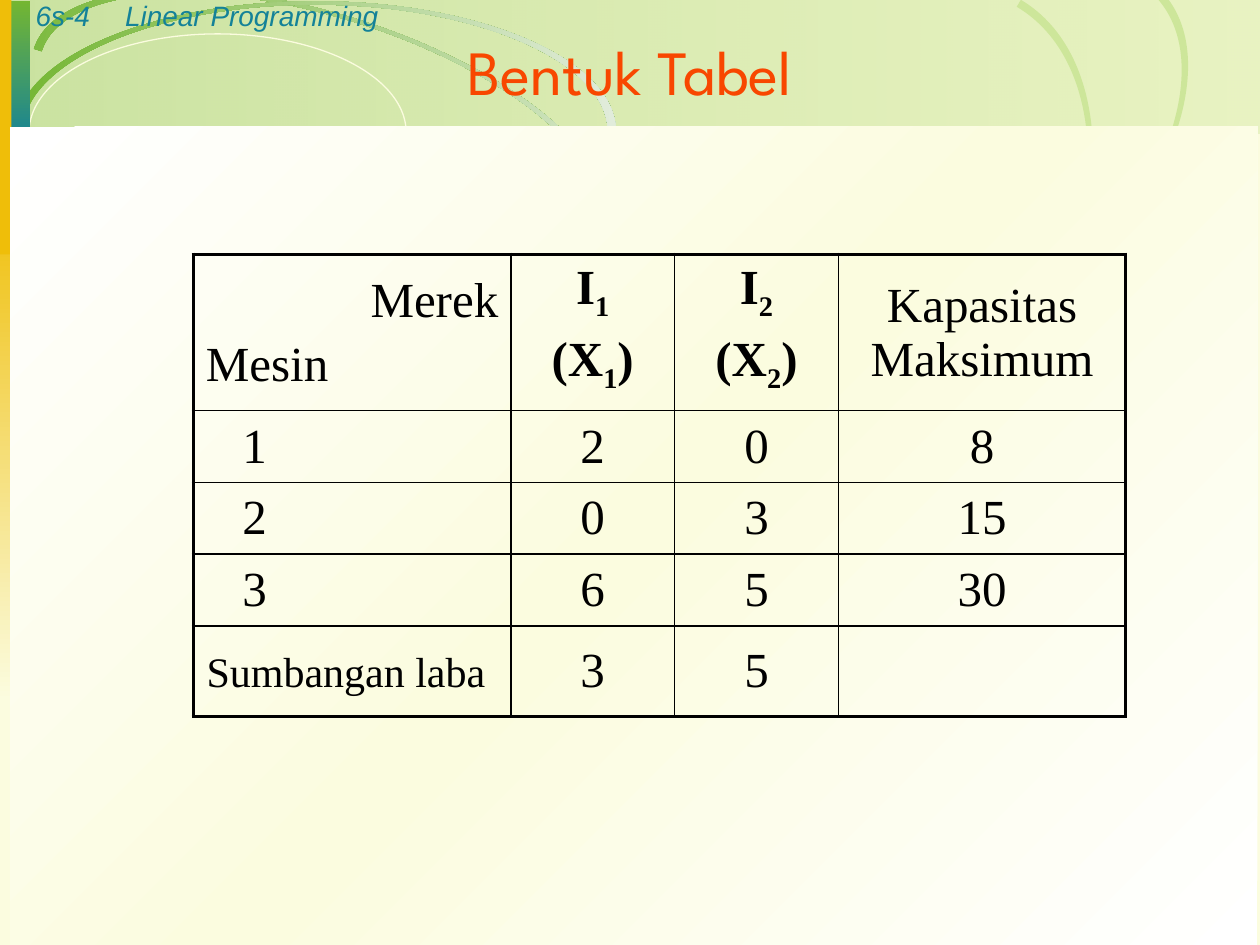
from lxml.etree import SubElement
from pptx import Presentation
from pptx.dml.color import RGBColor
from pptx.enum.shapes import MSO_SHAPE
from pptx.enum.text import MSO_ANCHOR, PP_ALIGN
from pptx.oxml import parse_xml
from pptx.oxml.ns import nsdecls, qn
from pptx.util import Pt

COLORS = {
    "cream": "FBFCDF",
    "white": "FFFFFF",
    "black": "000000",
    "green": "74B632",
    "light_green": "BCDD7B",
    "pale_green": "E1ECDB",
    "lime": "CDE69A",
    "olive": "CEDE73",
    "teal": "148298",
    "yellow": "EFBE09",
    "orange": "F84700",
}
COLUMN_WIDTHS = [181.4, 93.6, 93.6, 164.2]
ROW_HEIGHTS = [81.4, 41, 41, 41, 51.8]
HEADER = ["Merek\nMesin", "I_1\n(X_1_)", "I_2\n(X_2_)", "Kapasitas Maksimum"]
BODY = [
    ["1", "2", "0", "8"],
    ["2", "0", "3", "15"],
    ["3", "6", "5", "30"],
    ["Sumbangan laba", "3", "5", ""],
]


def color(name):
    return RGBColor.from_string(COLORS[name])


class SlideBuilder:
    body_font = "Times New Roman"
    header_font = "Arial"
    title_font = "League Spartan"
    body_size = 28

    def __init__(self, slide):
        self.slide = slide
        slide.background.fill.solid()
        slide.background.fill.fore_color.rgb = color("cream")

    def gradient(self, shape, names, angle, opacities):
        shape.fill.background()
        properties = shape._element.spPr
        gradient = parse_xml(f'<a:gradFill {nsdecls("a")} rotWithShape="1"/>')
        stops = SubElement(gradient, qn("a:gsLst"))
        for index, name in enumerate(names):
            position = 100000 * index // (len(names) - 1)
            stop = SubElement(stops, qn("a:gs"), pos=str(position))
            shade = SubElement(stop, qn("a:srgbClr"), val=COLORS[name])
            if opacities:
                SubElement(shade, qn("a:alpha"), val=str(opacities[index] * 1000))
        SubElement(gradient, qn("a:lin"), ang=str(angle * 60000), scaled="0")
        properties.replace(properties.find(qn("a:noFill")), gradient)

    def paint(self, shape, names, angle=0, opacities=None):
        shape.shadow.inherit = False
        shape.line.fill.background()
        if len(names) > 1:
            self.gradient(shape, names, angle, opacities)
        else:
            shape.fill.solid()
            shape.fill.fore_color.rgb = color(names[0])

    def panel(self, left, top, width, height, names, angle=0, opacities=None):
        shape = self.slide.shapes.add_shape(
            MSO_SHAPE.RECTANGLE, Pt(left), Pt(top), Pt(width), Pt(height))
        self.paint(shape, names, angle, opacities)

    def ellipse(self, left, top, width, height, line):
        shape = self.slide.shapes.add_shape(
            MSO_SHAPE.OVAL, Pt(left), Pt(top), Pt(width), Pt(height))
        shape.shadow.inherit = False
        shape.fill.background()
        shape.line.color.rgb = color(line)
        shape.line.width = Pt(0.75)

    def arc(self, left, top, width, height, tilt, names, flip=False):
        middle_x, middle_y, bend = width / 2, height / 2, 0.55

        def half(inset_x, inset_y):
            rx, ry = middle_x - inset_x, middle_y - inset_y
            offsets = [(-1, 0), (-1, -bend), (-bend, -1), (0, -1),
                       (bend, -1), (1, -bend), (1, 0)]
            return [(Pt(left + middle_x + rx * x), Pt(top + middle_y + ry * y))
                    for x, y in offsets]

        points = half(4.6, 2) + half(0, 0)[::-1]
        builder = self.slide.shapes.build_freeform(*points[0])
        builder.add_line_segments(points[1:], close=True)
        shape = builder.convert_to_shape()
        outline = next(shape._element.iter(qn("a:path")))
        lines = outline.findall(qn("a:lnTo"))
        for start in (0, 3, 7, 10):
            curve = parse_xml(f'<a:cubicBezTo {nsdecls("a")}/>')
            lines[start].addprevious(curve)
            for line in lines[start:start + 3]:
                curve.append(line[0])
                outline.remove(line)
        shape.height = Pt(height)
        outline.set("h", str(Pt(height)))
        shape.rotation = tilt
        if flip:
            shape._element.spPr.find(qn("a:xfrm")).set("flipV", "1")
        self.paint(shape, names)

    def style(self, span, font, size, name, italic=False, bold=False):
        span.font.name = font
        span.font.size = Pt(size)
        span.font.color.rgb = color(name)
        span.font.italic = italic
        span.font.bold = bold

    def text(self, left, top, width, height, words, font, size, name,
             align=PP_ALIGN.LEFT, anchor=MSO_ANCHOR.TOP, inset=7.2, italic=False):
        box = self.slide.shapes.add_textbox(Pt(left), Pt(top), Pt(width), Pt(height))
        frame = box.text_frame
        frame.word_wrap = True
        frame.vertical_anchor = anchor
        frame.margin_left = Pt(inset)
        frame.text = words
        para = frame.paragraphs[0]
        para.alignment = align
        self.style(para.runs[0], font, size, name, italic)

    def borders(self, cell, widths):
        properties = cell._tc.get_or_add_tcPr()
        for index, (side, width) in enumerate(zip("LRTB", widths)):
            properties.insert(index, parse_xml(
                f'<a:ln{side} {nsdecls("a")} w="{Pt(width)}"><a:solidFill>'
                f'<a:srgbClr val="{COLORS["black"]}"/></a:solidFill></a:ln{side}>'))

    def cell_text(self, cell, words, align, size, bold):
        cell.text_frame.text = words.replace("_", "")
        for para, line in zip(cell.text_frame.paragraphs, words.split("\n")):
            para.alignment = align
            para._p.get_or_add_pPr().insert(0, parse_xml(
                f'<a:spcBef {nsdecls("a")}><a:spcPct val="20000"/></a:spcBef>'))
            for position, piece in enumerate(filter(None, line.split("_"))):
                span = para.runs[0] if position == 0 else para.add_run()
                span.text = piece
                self.style(span, self.body_font, size, "black", bold=bold)
                if position % 2:
                    span.font._element.set("baseline", "-25000")

    def table(self, left, top, widths, heights, rows):
        table = self.slide.shapes.add_table(
            len(heights), len(widths), Pt(left), Pt(top),
            Pt(sum(widths)), Pt(sum(heights))).table
        table.first_row = table.horz_banding = False
        for column, width in zip(table.columns, widths):
            column.width = Pt(width)
        last_row, last_column = len(heights) - 1, len(widths) - 1
        for r, (height, row) in enumerate(zip(heights, rows)):
            table.rows[r].height = Pt(height)
            for c, words in enumerate(row):
                cell = table.cell(r, c)
                product = r == 0 and c in (1, 2)
                align = PP_ALIGN.CENTER if c or r == last_row else PP_ALIGN.LEFT
                size = 24 if r == last_row and c == 0 else self.body_size
                self.cell_text(cell, words, align, size, product)
                cell.vertical_anchor = MSO_ANCHOR.TOP if product else MSO_ANCHOR.MIDDLE
                if c == 0 and 0 < r < last_row:
                    cell.text_frame.paragraphs[0]._p.pPr.set("marL", str(Pt(20.8)))
                cell.fill.background()
                edges = (c == 0, c == last_column, r == 0, r == last_row)
                self.borders(cell, [2.25 if edge else 1 for edge in edges])
        table.cell(0, 0).text_frame.paragraphs[0].alignment = PP_ALIGN.RIGHT
        span = table.cell(last_row, 0).text_frame.paragraphs[0].add_run()
        span.text = " "
        self.style(span, self.body_font, self.body_size, "black")


def main():
    deck = Presentation()
    deck.slide_width, deck.slide_height = Pt(720), Pt(540)
    page = SlideBuilder(deck.slides.add_slide(deck.slide_layouts[6]))

    fade = ["green", "pale_green"]
    page.panel(0.7, 0, 719.3, 76.3, ["green", "light_green"], opacities=[36, 29])
    page.arc(11.5, 7.9, 343.4, 143.3, 17.5, fade)
    page.ellipse(16.6, 19.4, 215.5, 112.3, "cream")
    page.panel(0, 111.6, 15.8, 288.7, ["yellow", "cream"], 90)
    page.arc(365, 17.3, 343.4, 186.5, 318.2, ["lime"], flip=True)
    page.arc(324, 37.4, 343.4, 220.3, 300.7, ["lime"], flip=True)
    page.arc(8.6, 0.7, 343.4, 149, 0, fade)
    page.panel(0.7, 0.7, 16.6, 82.1, ["green", "teal"], 90)
    page.panel(0, 0, 6.5, 145.4, ["yellow"])
    band = ["teal", "olive", "yellow", "orange", "cream"]
    for index, pair in enumerate(zip(band, band[1:])):
        page.panel(5.8 + 131.3 * index, 76.3, 262.8 if index == 3 else 132.5, 5.8, pair)
    page.panel(5.8, 72.3, 712.8, 467.7, ["white", "cream", "white"], 45)

    page.text(4.3, -4.3, 77.8, 26.6, "6s-4", page.header_font, 16, "teal",
              inset=16, italic=True)
    page.text(64.5, -4.3, 624.2, 26.6, "Linear Programming", page.header_font, 16,
              "teal", italic=True)
    page.text(0, 4.3, 720, 72, "Bentuk Tabel", page.title_font, 36, "orange",
              PP_ALIGN.CENTER, MSO_ANCHOR.MIDDLE)
    page.table(110.5, 145.4, COLUMN_WIDTHS, ROW_HEIGHTS, [HEADER] + BODY)
    deck.save("out.pptx")


if __name__ == "__main__":
    main()
